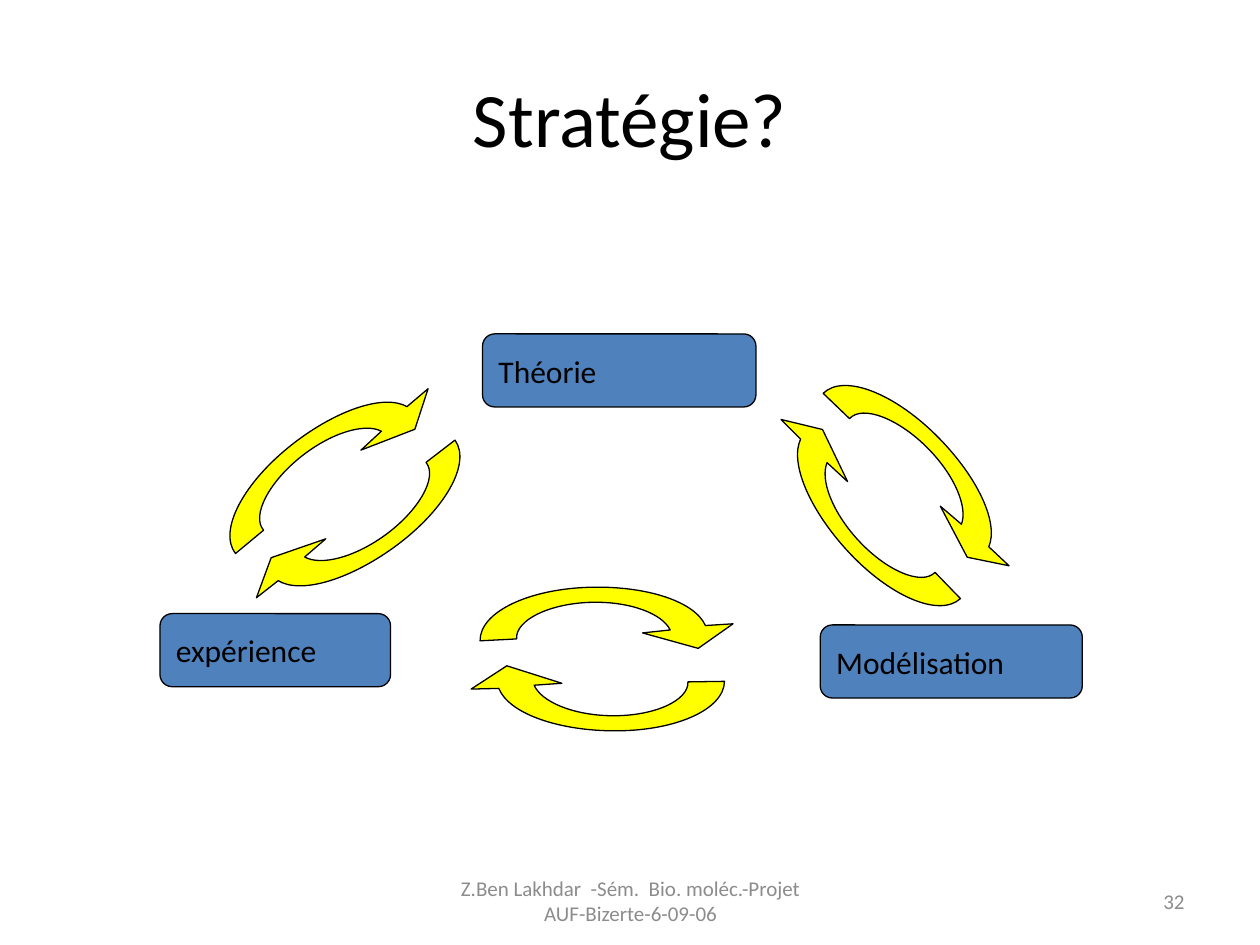
from lxml.etree import SubElement
from pptx import Presentation
from pptx.dml.color import RGBColor
from pptx.enum.shapes import MSO_SHAPE
from pptx.enum.text import MSO_ANCHOR, PP_ALIGN
from pptx.oxml.ns import qn
from pptx.util import Inches, Pt

BLACK = RGBColor(0x00, 0x00, 0x00)
GREY = RGBColor(0x8C, 0x8C, 0x8C)
BLUE = RGBColor(0x4F, 0x81, 0xBD)
YELLOW = RGBColor(0xFF, 0xFF, 0x00)

ARROW_WIDTH, ARROW_HEIGHT = 1.81, 0.82
ARROW_START = (1.51, 0.35)
ARROW_SEGMENTS = [
    [(1.45, 0.22), (1.2, 0.12), (0.9, 0.12)],
    [(0.56, 0.12), (0.28, 0.25), (0.29, 0.4)],
    [(0, 0.41)],
    [(0, 0.18), (0.4, 0), (0.9, 0)],
    [(1.34, 0), (1.71, 0.13), (1.79, 0.32)],
    [(2.01, 0.31)],
    [(1.73, 0.5)],
    [(1.29, 0.37)],
    [ARROW_START],
]

STAGES = [
    ("Théorie", (3.83, 2.65, 2.17, 0.58)),
    ("expérience", (1.27, 4.87, 1.83, 0.58)),
    ("Modélisation", (6.51, 4.96, 2.08, 0.58)),
]
CYCLE_ARROWS = [
    (6.26, 3.36, 45.7),
    (6.11, 3.67, 227.8),
    (1.68, 3.43, 322.3),
    (1.97, 3.61, 144.4),
    (3.81, 4.66, 359),
    (3.94, 4.98, 181.1),
]


def write_text(frame, text, align, size, color):
    """Write one vertically centred paragraph into a text frame."""
    frame.word_wrap = True
    frame.vertical_anchor = MSO_ANCHOR.MIDDLE
    paragraph = frame.paragraphs[0]
    paragraph.alignment = align
    run = paragraph.add_run()
    run.text = text
    run.font.color.rgb = color
    for name, value in {"name": "Calibri", "size": Pt(size)}.items():
        setattr(run.font, name, value)


def paint(shape, color):
    """Give a shape a flat fill and a thin black outline."""
    shape.shadow.inherit = False
    shape.fill.solid()
    shape.fill.fore_color.rgb = color
    shape.line.color.rgb = BLACK
    shape.line.width = Pt(0.75)


def add_label(slide, box, text, align, size, color):
    """Place plain text in the given box."""
    label = slide.shapes.add_textbox(*map(Inches, box))
    write_text(label.text_frame, text, align, size, color)


def add_stage(slide, box, text):
    """Place one rounded stage of the cycle in the given box."""
    stage = slide.shapes.add_shape(MSO_SHAPE.ROUNDED_RECTANGLE, *map(Inches, box))
    paint(stage, BLUE)
    write_text(stage.text_frame, text, PP_ALIGN.LEFT, 18, BLACK)


def draw_outline(arrow):
    """Replace the segments of a freeform with the curved arrow outline."""
    outline = arrow._element.xpath(".//a:path")[0]
    outline.set("w", str(Inches(ARROW_WIDTH)))
    outline.set("h", str(Inches(ARROW_HEIGHT)))
    for segment in list(outline):
        outline.remove(segment)
    commands = [("a:moveTo", [ARROW_START])]
    for points in ARROW_SEGMENTS:
        commands.append(("a:lnTo" if len(points) == 1 else "a:cubicBezTo", points))
    for tag, points in commands:
        segment = SubElement(outline, qn(tag))
        for x, y in points:
            SubElement(segment, qn("a:pt"), x=str(Inches(x)), y=str(Inches(y)))
    SubElement(outline, qn("a:close"))


def add_cycle_arrow(slide, left, top, angle):
    """Place a curved arrow turned by the angle about its box centre."""
    builder = slide.shapes.build_freeform(Inches(left), Inches(top))
    builder.add_line_segments([(Inches(left + ARROW_WIDTH), Inches(top + ARROW_HEIGHT))])
    arrow = builder.convert_to_shape()
    draw_outline(arrow)
    arrow.rotation = angle
    paint(arrow, YELLOW)


def add_footer(slide, left, top, width, height):
    """Place the event line and the page number along the footer band."""
    event = "Z.Ben Lakhdar  -Sém.  Bio. moléc.-Projet AUF-Bizerte-6-09-06"
    add_label(slide, (left, top, 3.17, height), event, PP_ALIGN.CENTER, 12, GREY)
    number_width = 2.33
    number_box = (left + width - number_width, top, number_width, height)
    add_label(slide, number_box, "32", PP_ALIGN.RIGHT, 12, GREY)


def main():
    """Build the strategy slide and save it."""
    presentation = Presentation()
    presentation.slide_width = Inches(10)
    presentation.slide_height = Inches(7.5)
    slide = presentation.slides.add_slide(presentation.slide_layouts[6])
    add_footer(slide, 3.42, 6.95, 6.08, 0.4)
    add_label(slide, (0.5, 0.3, 9, 1.25), "Stratégie?", PP_ALIGN.CENTER, 44, BLACK)
    for text, box in STAGES:
        add_stage(slide, box, text)
    for left, top, angle in CYCLE_ARROWS:
        add_cycle_arrow(slide, left, top, angle)
    presentation.save("out.pptx")


if __name__ == "__main__":
    main()
